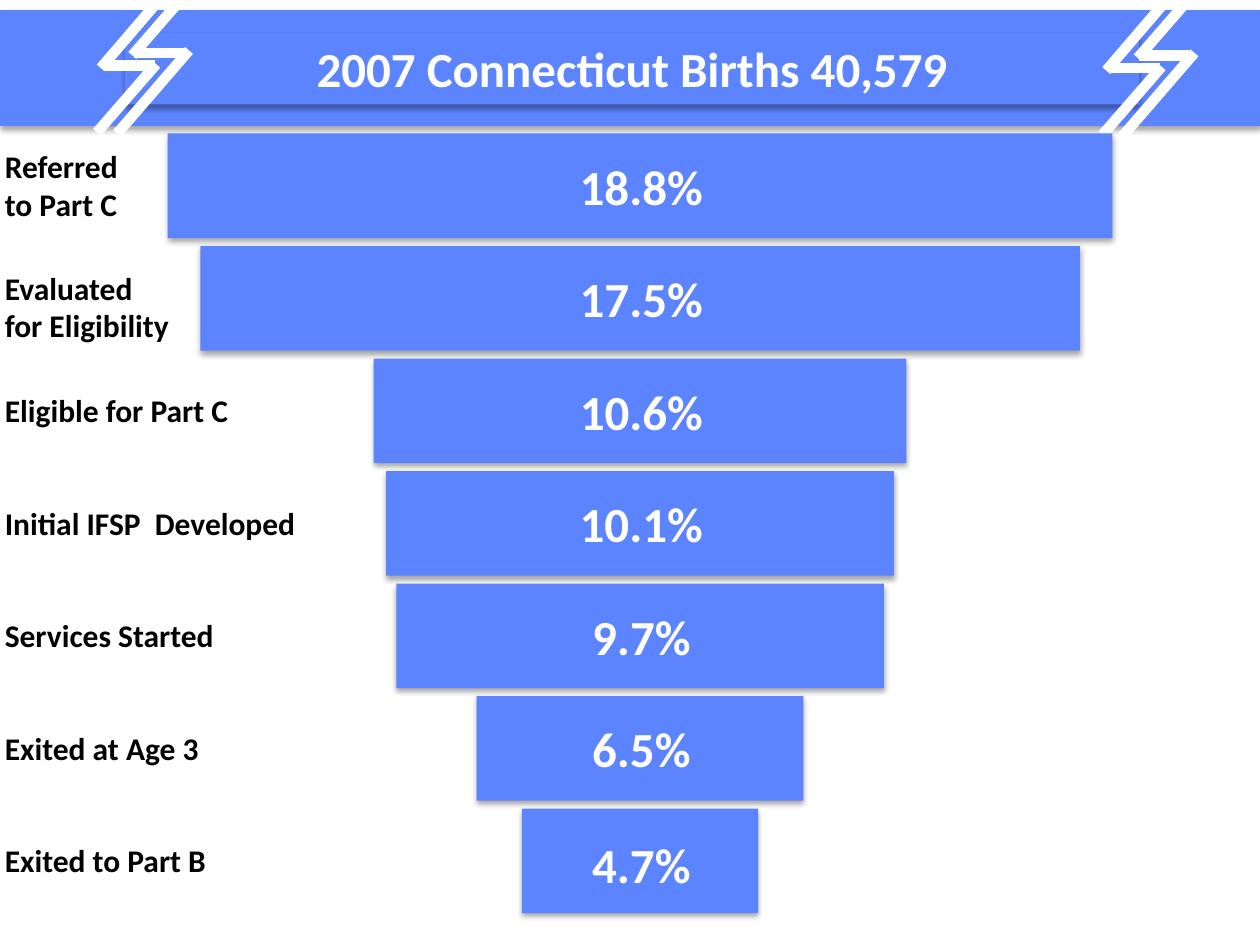
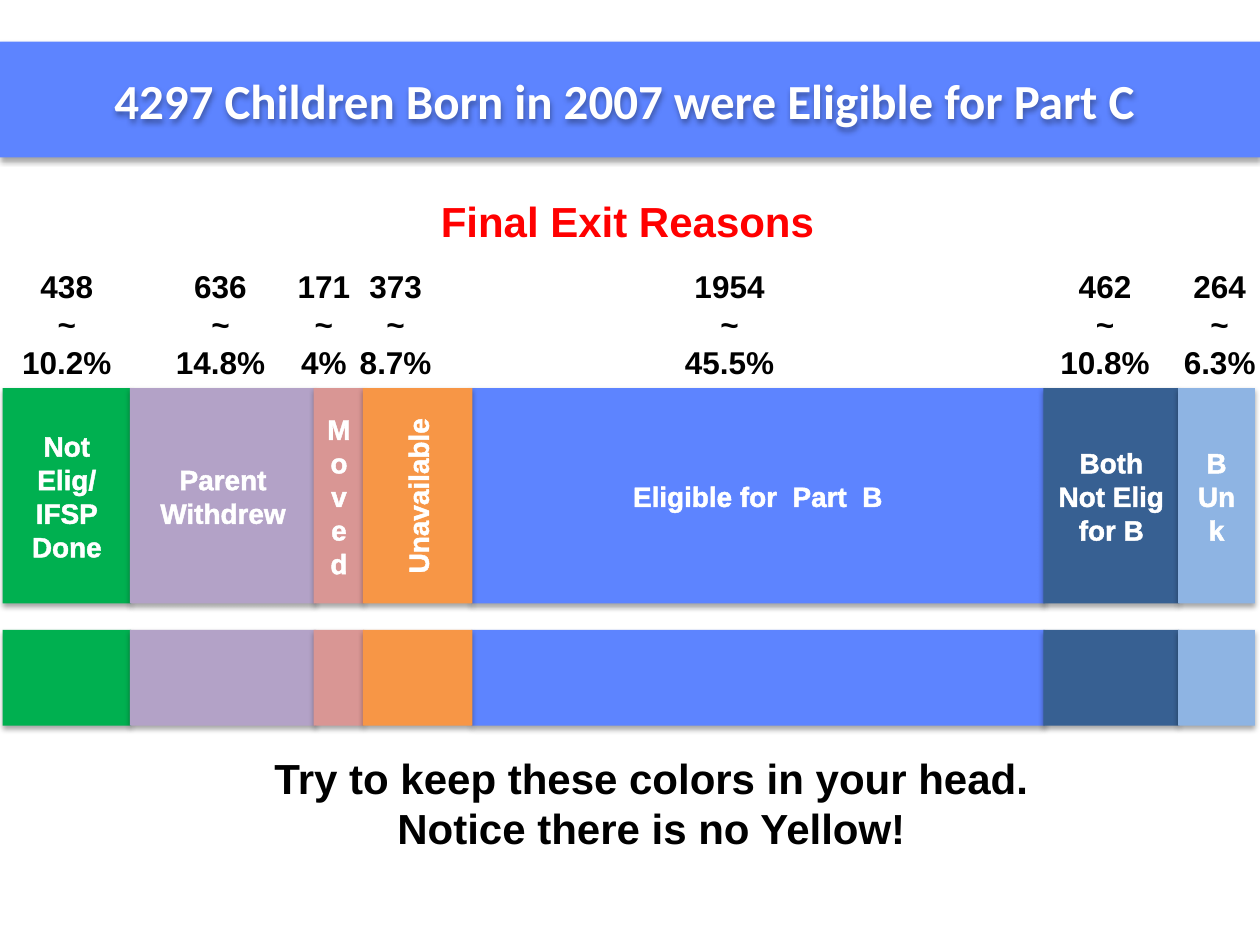
import pptx
import pptx.dml.color
import pptx.enum.shapes
import pptx.enum.text
import pptx.oxml
import pptx.oxml.ns
import pptx.util
from pptx.util import Inches

BLUE, WHITE, BLACK, RED = "5D84FF", "FFFFFF", "000000", "FF0000"
DRAWING = pptx.oxml.ns.nsdecls("a")
SHADOW = (f'<a:effectLst {DRAWING}><a:outerShdw blurRad="40000" dist="23000" dir="5400000" '
          f'rotWithShape="0"><a:srgbClr val="{BLACK}"><a:alpha val="35000"/></a:srgbClr>'
          '</a:outerShdw></a:effectLst>')
NO_EFFECT = f"<a:effectLst {DRAWING}/>"
OUTLINE = (f'<a:ln {DRAWING} w="18415"><a:solidFill><a:srgbClr val="{WHITE}"/>'
           '</a:solidFill></a:ln>')

# label, percent, label width, label offset, value width, value offset
FUNNEL_ROWS = [
    ("Referred\vto Part C", 18.8, 1.16, 0.06, 3.27, 0.13),
    ("Evaluated\nfor Eligibility", 17.5, 1.57, 0.13, 3.53, 0.13),
    ("Eligible for Part C", 10.6, 2.05, 0.21, 2.48, 0.13),
    ("Initial IFSP  Developed", 10.1, 2.61, 0.21, 2.37, 0.13),
    ("Services Started", 9.7, 1.87, 0.21, 2.71, 0.13),
    ("Exited at Age 3", 6.5, 1.75, 0.21, 2.1, 0.13),
    ("Exited to Part B", 4.7, 1.87, 0.21, 1.6, 0.16),
]
FUNNEL_TOP, FUNNEL_STEP, FUNNEL_CENTER = 1.06, 0.893, 5.08
INCHES_PER_PERCENT = 7.5 / 18.8

BOLT_STROKES = [
    (1.28, -0.02, 0.8, 0.54), (1.24, 0.51, 0.77, 1.05), (1.45, -0.02, 1.05, 0.44),
    (1.5, 0.4, 0.93, 1.06), (1.23, 0.52, 0.83, 0.52), (1.46, 0.42, 1.06, 0.42),
]

# left, width, colour, reason, left of the count, count, share
EXIT_REASONS = [
    (3.74, 4.55, BLUE, "Eligible for  Part  B", 5.32, "1954", "45.5%"),
    (8.28, 1.08, "376092", "Both\nNot Elig\nfor B", 8.3, "462", "10.8%"),
    (9.35, 0.61, "8EB4E3", "B\nUnk", 9.21, "264", "6.3%"),
    (0.02, 1.02, "00B050", "Not Elig/\nIFSP\nDone", 0.06, "438", "10.2%"),
    (1.03, 1.48, "B3A2C7", "Parent\nWithdrew", 1.28, "636", "14.8%"),
    (2.49, 0.4, "D99694", "Moved", 2.1, "171", "4%"),
    (2.88, 0.87, "F79646", "Unavailable", 2.67, "373", "8.7%"),
]


def color(value):
    return pptx.dml.color.RGBColor.from_string(value)


class Painter:
    """Holds the deck, its style and the slide being built."""

    def __init__(self):
        self.deck = pptx.Presentation()
        self.deck.slide_width, self.deck.slide_height = Inches(10), Inches(7.5)
        self.page = None

    def new_page(self):
        self.page = self.deck.slides.add_slide(self.deck.slide_layouts[6])

    def bar(self, left, top, width, height, fill=BLUE):
        bar = self.page.shapes.add_shape(
            pptx.enum.shapes.MSO_SHAPE.RECTANGLE,
            Inches(left), Inches(top), Inches(width), Inches(height))
        bar.fill.solid()
        bar.fill.fore_color.rgb = color(fill)
        bar.line.fill.background()
        self.add_effect(bar, SHADOW)
        return bar

    def band(self, top):
        return self.bar(0, top, 10, 0.92)

    def add_effect(self, shape, effect):
        shape._element.spPr.append(pptx.oxml.parse_xml(effect))

    def set_text(self, shape, text, size, ink, font="Arial", centered=True):
        frame = shape.text_frame
        frame.text = text
        for para in frame.paragraphs:
            para.alignment = (pptx.enum.text.PP_ALIGN.CENTER if centered
                              else pptx.enum.text.PP_ALIGN.LEFT)
            para.font.size = pptx.util.Pt(size)
            para.font.name = font
            para.font.bold = True
            para.font.color.rgb = color(ink)

    def grow_from_top(self, shape, wrap=True):
        frame = shape.text_frame
        frame.word_wrap = wrap
        frame.auto_size = pptx.enum.text.MSO_AUTO_SIZE.SHAPE_TO_FIT_TEXT
        frame.vertical_anchor = pptx.enum.text.MSO_ANCHOR.TOP

    def text(self, left, top, width, height, text, size, ink, font="Arial",
             centered=True, wrap=True):
        box = self.page.shapes.add_textbox(
            Inches(left), Inches(top), Inches(width), Inches(height))
        self.set_text(box, text, size, ink, font, centered)
        self.grow_from_top(box, wrap)
        return box

    def outline_text(self, shape):
        for properties in shape._element.iter(pptx.oxml.ns.qn("a:defRPr")):
            properties.insert(0, pptx.oxml.parse_xml(OUTLINE))

    def bolt(self, dx, dy):
        """Draw the white zigzag that marks the band as cut short."""
        for x1, y1, x2, y2 in BOLT_STROKES:
            stroke = self.page.shapes.add_connector(
                pptx.enum.shapes.MSO_CONNECTOR.STRAIGHT,
                Inches(x1 + dx), Inches(y1 + dy), Inches(x2 + dx), Inches(y2 + dy))
            stroke.line.color.rgb = color(WHITE)
            stroke.line.width = pptx.util.Pt(6)
            self.add_effect(stroke, NO_EFFECT)


def build_funnel(painter):
    painter.new_page()
    painter.band(0.08)
    title = painter.bar(0.99, 0.26, 8.05, 0.57)
    painter.set_text(title, "2007 Connecticut Births 40,579", 28, WHITE, "Calibri")
    painter.grow_from_top(title)
    painter.bolt(0, 0)
    painter.bolt(7.98, 0.02)
    for index, row in enumerate(FUNNEL_ROWS):
        label, percent, label_width, label_offset, value_width, value_offset = row
        top = FUNNEL_TOP + index * FUNNEL_STEP
        width = percent * INCHES_PER_PERCENT
        painter.bar(FUNNEL_CENTER - width / 2, top, width, 0.83)
        painter.text(FUNNEL_CENTER + 0.01 - value_width / 2, top + value_offset,
                     value_width, 0.57, f"{percent}%", 28, WHITE, "Calibri")
        label_height = 0.4 if label_offset == 0.21 else 0.71
        painter.text(-0.06, top + label_offset, label_width, label_height,
                     label, 18, BLACK, "Calibri", centered=False, wrap=False)


def build_exit_reasons(painter):
    painter.new_page()
    painter.band(0.33)
    title = painter.text(0.33, 0.51, 9.25, 0.57,
                         "4297 Children Born in 2007 were Eligible for Part C",
                         28, WHITE, "Calibri")
    painter.add_effect(title, SHADOW)
    painter.text(3.4, 1.5, 3.19, 0.5, "Final Exit Reasons", 24, RED,
                 centered=False, wrap=False)
    for left, width, fill, reason, count_left, count, share in EXIT_REASONS:
        segment = painter.bar(left, 3.08, width, 1.71, fill)
        painter.set_text(segment, reason, 16, WHITE)
        painter.outline_text(segment)
        segment.text_frame.word_wrap = True
        segment.text_frame.vertical_anchor = pptx.enum.text.MSO_ANCHOR.MIDDLE
        if reason == "Unavailable":
            segment.text_frame._txBody.bodyPr.set("vert", "vert270")
        painter.bar(left, 5, width, 0.76, fill)
        painter.text(count_left, 2.07, 0.94, 1.01, f"{count}\n~\n{share}", 18, BLACK)
    painter.text(2.05, 5.92, 6.24, 0.91,
                 "Try to keep these colors in your head.\nNotice there is no Yellow!",
                 24, BLACK, wrap=False)


def main():
    painter = Painter()
    build_funnel(painter)
    build_exit_reasons(painter)
    painter.deck.save("out.pptx")


if __name__ == "__main__":
    main()
